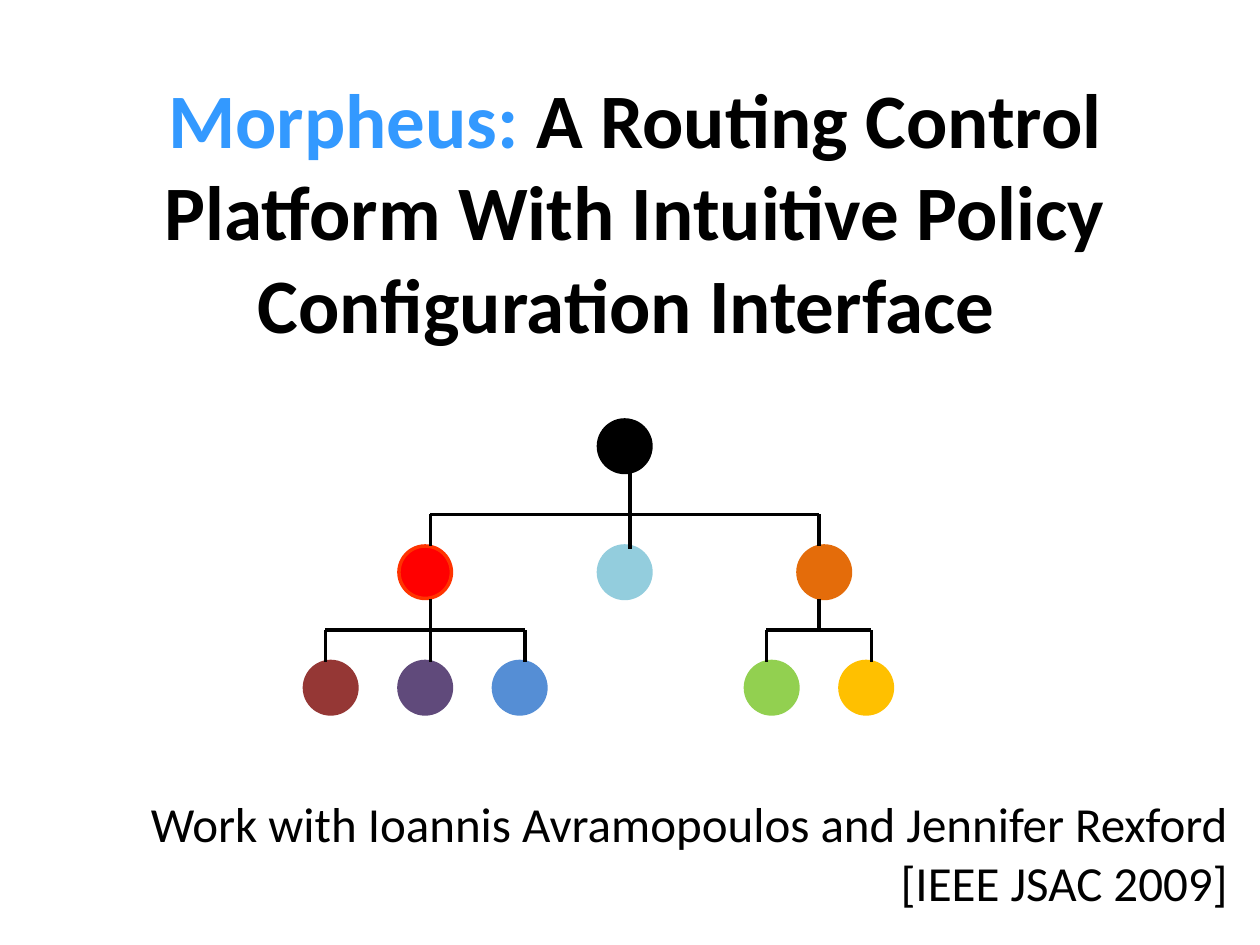
from dataclasses import dataclass

from pptx import Presentation
from pptx.dml.color import RGBColor as Rgb
from pptx.enum.shapes import MSO_CONNECTOR as Connector, MSO_SHAPE as Shape
from pptx.enum.text import MSO_ANCHOR as Anchor, MSO_AUTO_SIZE as AutoSize, PP_ALIGN as Align
from pptx.oxml.ns import qn
from pptx.util import Emu, Pt

PX = 7620
NODE = 50


@dataclass(frozen=True)
class Theme:
    """Colours, font and sizes of the slide."""
    font: str = "Calibri"
    ink: str = "000000"
    accent: str = "3399FF"
    title_size: int = 44
    credit_size: int = 28
    node_line: float = 2
    branch_line: float = 2.25


THEME = Theme()

# left, top, fill, outline
NODES = [
    (570, 400, "000000", "000000"),
    (380, 520, "FF0000", "FF3300"),
    (570, 520, "93CDDD", "93CDDD"),
    (760, 520, "E46C0A", "E46C0A"),
    (290, 630, "953735", "953735"),
    (380, 630, "604A7B", "604A7B"),
    (470, 630, "558ED5", "558ED5"),
    (710, 630, "92D050", "92D050"),
    (800, 630, "FFC000", "FFC000"),
]

# trunk x, parent bottom, crossbar y, child top, drop xs
BRANCHES = [
    (600, 450, 490, 523, (410, 600, 780)),
    (410, 570, 600, 630, (310, 410, 500)),
    (780, 570, 600, 630, (730, 830)),
]


def px(*lengths):
    """Turn pixel lengths into EMU."""
    return [Emu(length * PX) for length in lengths]


def apply(target, formats):
    """Set attributes from a dict of format values."""
    for name, value in formats.items():
        setattr(target, name, value)


def add_text(page, place, paragraphs, align, frame_format, font_format):
    """Add a text box whose paragraphs are lists of (text, colour) spans."""
    frame = page.shapes.add_textbox(*px(*place)).text_frame
    apply(frame, frame_format)
    for index, spans in enumerate(paragraphs):
        para = frame.add_paragraph() if index else frame.paragraphs[0]
        para.alignment = align
        for text, colour in spans:
            span = para.add_run()
            span.text = text
            apply(span.font, {"name": THEME.font, **font_format})
            span.font.color.rgb = Rgb.from_string(colour)


def add_node(page, left, top, fill, outline):
    """Add one round tree node."""
    node = page.shapes.add_shape(Shape.OVAL, *px(left, top, NODE, NODE))
    node.shadow.inherit = False
    node.fill.solid()
    node.fill.fore_color.rgb = Rgb.from_string(fill)
    node.line.color.rgb = Rgb.from_string(outline)
    node.line.width = Pt(THEME.node_line)


def add_line(page, *ends):
    """Add a straight line between two points."""
    line = page.shapes.add_connector(Connector.STRAIGHT, *px(*ends))
    line.line.color.rgb = Rgb.from_string(THEME.ink)
    line.line.width = Pt(THEME.branch_line)
    properties = line.element.spPr
    properties.append(properties.makeelement(qn("a:effectLst"), {}))


def add_branch(page, trunk, top, bar, bottom, drops):
    """Add a trunk, a crossbar and a drop to each child."""
    add_line(page, drops[0], bar, drops[-1], bar)
    add_line(page, trunk, top, trunk, bottom if trunk in drops else bar)
    for drop in drops:
        if drop != trunk:
            add_line(page, drop, bar, drop, min(bottom, bar + 30))


def main():
    """Build the title slide and save it."""
    deck = Presentation()
    deck.slide_width, deck.slide_height = px(1200, 900)
    page = deck.slides.add_slide(deck.slide_layouts[6])
    title = [("Morpheus: ", THEME.accent),
             ("A Routing Control Platform With Intuitive Policy Configuration Interface ", THEME.ink)]
    add_text(page, (50, 60, 1110, 280), [title], Align.CENTER,
             {"word_wrap": True, "vertical_anchor": Anchor.MIDDLE},
             {"size": Pt(THEME.title_size), "bold": True})
    credits = ["Work with Ioannis Avramopoulos and Jennifer Rexford", "[IEEE JSAC 2009]"]
    add_text(page, (120, 750, 1061, 125), [[(line, THEME.ink)] for line in credits], Align.RIGHT,
             {"word_wrap": False, "auto_size": AutoSize.SHAPE_TO_FIT_TEXT},
             {"size": Pt(THEME.credit_size)})
    for node in NODES:
        add_node(page, *node)
    for branch in BRANCHES:
        add_branch(page, *branch)
    deck.save("out.pptx")


if __name__ == "__main__":
    main()
